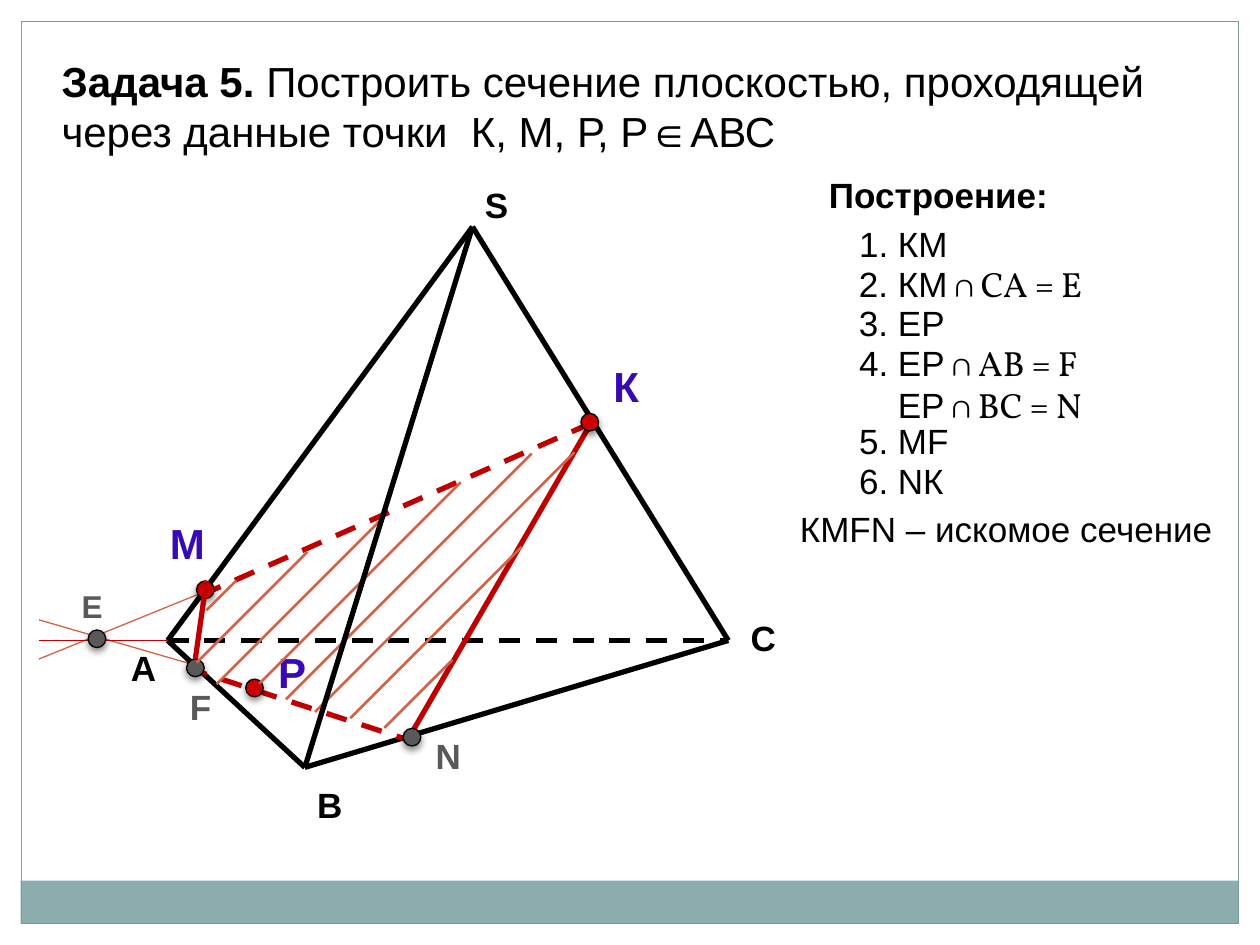
"""Build a slide on the section of a pyramid by a plane through three points."""
from lxml.etree import SubElement
from pptx import Presentation
from pptx.dml.color import RGBColor
from pptx.enum.dml import MSO_LINE
from pptx.enum.shapes import MSO_CONNECTOR, MSO_SHAPE
from pptx.enum.text import MSO_AUTO_SIZE
from pptx.oxml import parse_xml
from pptx.oxml.ns import nsdecls, qn
from pptx.util import Pt

BLACK = RGBColor(0x00, 0x00, 0x00)
GRAY = RGBColor(0x59, 0x59, 0x59)
BLUE = RGBColor(0x37, 0x0A, 0xB6)
RED = RGBColor(0xC0, 0x00, 0x00)
DOT = RGBColor(0xCC, 0x00, 0x00)
CORAL = RGBColor(0xD1, 0x63, 0x49)
TEAL = RGBColor(0x8C, 0xAD, 0xAE)
EDGE = RGBColor(0x7C, 0x99, 0x9A)
SHADOW = (
    f'<a:effectLst {nsdecls("a")}><a:outerShdw blurRad="50800" dist="25400" dir="5400000">'
    '<a:srgbClr val="000000"><a:alpha val="45000"/></a:srgbClr></a:outerShdw></a:effectLst>'
)

deck = Presentation()
deck.slide_width, deck.slide_height = Pt(720), Pt(540)
slide = deck.slides.add_slide(deck.slide_layouts[6])
shapes = slide.shapes


def draw(start, end, color, width, dash=False):
    line = shapes.add_connector(MSO_CONNECTOR.STRAIGHT, *map(Pt, start + end))
    line.line.color.rgb = color
    line.line.width = Pt(width)
    if dash:
        line.line.dash_style = MSO_LINE.DASH
    SubElement(line._element.spPr, qn("a:effectLst"))


def write(box, rows, size=20, color=BLACK, wrap=False):
    frame = shapes.add_textbox(*map(Pt, box)).text_frame
    frame.word_wrap = wrap
    frame.auto_size = MSO_AUTO_SIZE.SHAPE_TO_FIT_TEXT
    for i, row in enumerate(rows):
        para = frame.add_paragraph() if i else frame.paragraphs[0]
        for text, font, bold in row:
            run = para.add_run()
            run.text = text
            run.font.name = font
            run.font.size = Pt(size)
            run.font.bold = bold
            run.font.color.rgb = color
    return frame


band = shapes.add_shape(MSO_SHAPE.RECTANGLE, Pt(11.8), Pt(503.3), Pt(695.6), Pt(24.5))
band.shadow.inherit = False
band.fill.solid()
band.fill.fore_color.rgb = TEAL
band.line.fill.background()

border = shapes.add_shape(MSO_SHAPE.RECTANGLE, Pt(12.2), Pt(12.2), Pt(695.6), Pt(515.6))
border.shadow.inherit = False
border.fill.background()
border.line.color.rgb = EDGE
border.line.width = Pt(0.75)

S, A, B, C = (270, 129.6), (95.8, 366), (174.2, 438.5), (416.2, 366)
K = (337.7, 241.9)

draw((22.3, 354.2), (116.6, 381.6), CORAL, 0.75)
draw((22.3, 376.6), (118, 337.7), CORAL, 0.75)
for start, end in ((S, C), (S, A), (A, B), (B, C)):
    draw(start, end, BLACK, 3)
draw(A, C, BLACK, 3, True)
draw(A, (22.3, 366), RED, 1)
draw(K, (113.8, 340.6), RED, 3, True)
draw((106.6, 381.6), (230.4, 421.9), RED, 3, True)
draw(K, (231.8, 424.8), RED, 3)

for left, top, color in (
    (332, 236.2, DOT), (230.4, 416.2, GRAY), (140.4, 388.1, DOT),
    (112.3, 332, DOT), (50.4, 360, GRAY), (106.6, 376.6, GRAY),
):
    dot = shapes.add_shape(MSO_SHAPE.OVAL, Pt(left), Pt(top), Pt(10.1), Pt(10.1))
    dot.fill.solid()
    dot.fill.fore_color.rgb = color
    dot.line.color.rgb = BLACK
    dot.line.width = Pt(0.75)
    dot._element.spPr.append(parse_xml(SHADOW))

title = [
    ("Задача 5. ", "Arial", True),
    ("Построить сечение плоскостью, проходящей через данные точки  К, М, Р, Р∈АВС", "Arial", False),
]
write((28.1, 28.1, 669.6, 65.5), [title], 24, wrap=True)

for text, left, top, width, size, color in (
    ("А", 67.7, 365.8, 28.8, 20, BLACK),
    ("В", 174.2, 444.2, 28.8, 20, BLACK),
    ("С", 421.9, 348.5, 28.8, 20, BLACK),
    ("S", 270, 101.5, 28.1, 20, BLACK),
    ("К", 343.4, 202.3, 44.6, 24, BLUE),
    ("М", 90, 292.3, 34.6, 24, BLUE),
    ("Р", 151.9, 365.8, 31, 24, BLUE),
    ("Е", 39.6, 331.9, 26.6, 18, GRAY),
    ("N", 241.9, 416.2, 28.8, 20, GRAY),
    ("F", 101.5, 388.1, 26.6, 20, GRAY),
    ("Построение:", 466.6, 95.8, 140.4, 20, BLACK),
):
    write((left, top, width, size * 1.2 + 7.5), [[(text, "Arial", True)]], size, color)

draw((118, 331.9), (111.6, 376.6), RED, 3)

for slot, width, rows in (
    (0, 65.5, [("1. КМ", "")]),
    (1, 148.3, [("2. КМ", " ∩ СА = Е")]),
    (2, 64, [("3. EР", "")]),
    (3, 147.6, [("4. ЕР", " ∩ АВ = F"), ("ЕР", " ∩ ВC = N")]),
    (5, 66.2, [("5. МF", "")]),
    (6, 63.4, [("6. NК", "")]),
):
    runs = [
        [(text, font, False) for text, font in zip(row, ("Arial", "Vollkorn")) if text]
        for row in rows
    ]
    step = write((483.8, 123.8 + 22.5 * slot, width, 7.7 + 24 * len(rows)), runs)
    for para in step.paragraphs[1:]:
        para._p.get_or_add_pPr().set("marL", str(Pt(22.2)))

write((450, 286.6, 257.8, 31.7), [[("КМFN – искомое сечение", "Arial", False)]], wrap=True)

for left, low, span in (
    (118, 348.8, 17), (112.3, 378.7, 63.4), (123.8, 391, 92.9), (148.3, 390.6, 115),
    (163.4, 399.6, 140.4), (180, 406.8, 148.3), (200.2, 410.4, 97.9), (219.6, 416, 39),
):
    draw((left, low), (left + span, low - span), CORAL, 1.5)
draw(S, B, BLACK, 3)

deck.save("out.pptx")
